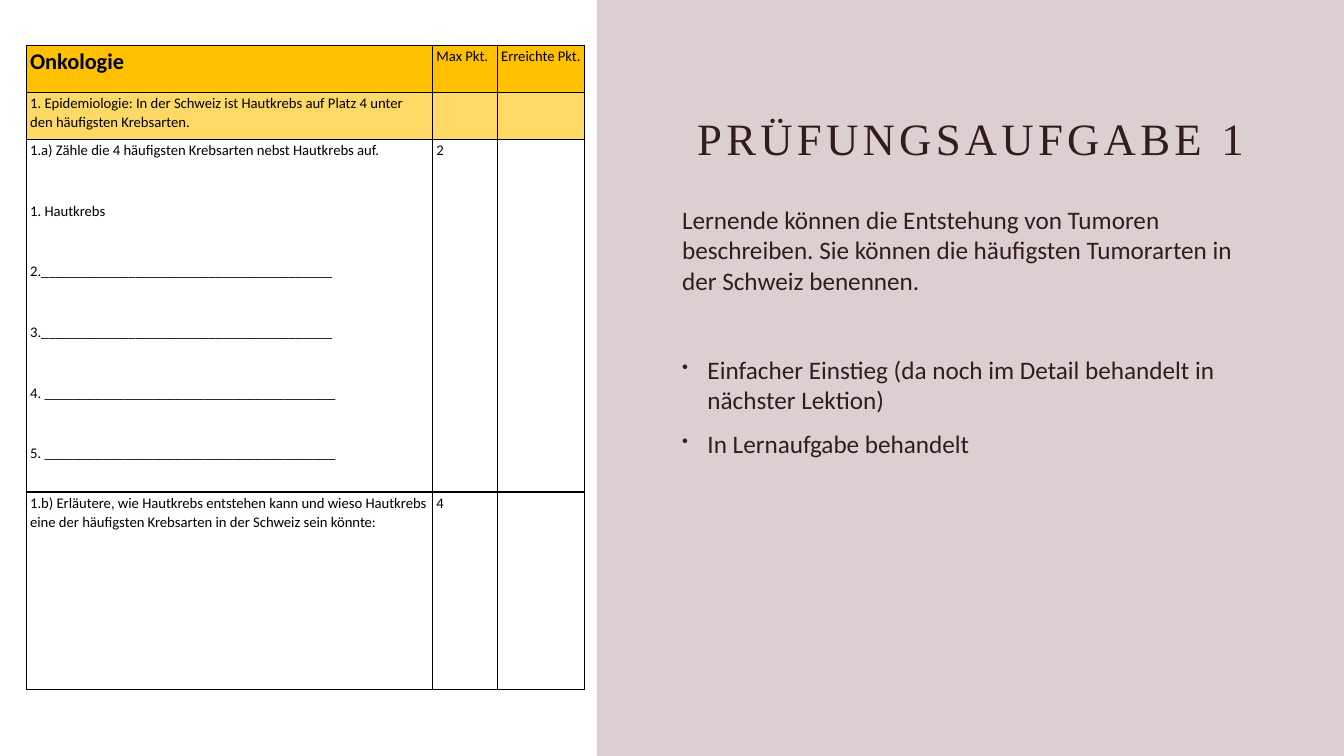
import pptx
import pptx.dml.color
import pptx.enum.shapes
import pptx.enum.text
import pptx.oxml
import pptx.oxml.ns
import pptx.util
from pptx.dml.color import RGBColor
from pptx.util import Cm, Pt

WHITE = RGBColor(0xFF, 0xFF, 0xFF)
BLACK = RGBColor(0x00, 0x00, 0x00)
MAUVE = RGBColor(0x76, 0x43, 0x4D)
DARK_BROWN = RGBColor(0x31, 0x1C, 0x20)
AMBER = RGBColor(0xFF, 0xC0, 0x00)
LIGHT_AMBER = RGBColor(0xFF, 0xD9, 0x66)

BODY_FONT = "Calibri"
TITLE_FONT = "Times New Roman"
ANSWER_LINE = "_" * 40

COLUMN_WIDTHS = [10.24, 1.63, 2.21]
ROW_HEIGHTS = [1.19, 1.19, 8.88, 4.97]
ROW_FILLS = [AMBER, LIGHT_AMBER, None, None]
EXAM_ROWS = [
    [["Onkologie"], ["Max Pkt."], ["Erreichte Pkt."]],
    [["1. Epidemiologie: In der Schweiz ist Hautkrebs auf Platz 4 unter den häufigsten Krebsarten."], [], []],
    [
        [
            "1.a) Zähle die 4 häufigsten Krebsarten nebst Hautkrebs auf.",
            "1. Hautkrebs",
            "2." + ANSWER_LINE,
            "3." + ANSWER_LINE,
            "4. " + ANSWER_LINE,
            "5. " + ANSWER_LINE,
        ],
        ["2"],
        [],
    ],
    [
        ["1.b) Erläutere, wie Hautkrebs entstehen kann und wieso Hautkrebs "
         "eine der häufigsten Krebsarten in der Schweiz sein könnte:"],
        ["4"],
        [],
    ],
]

GOAL = ("Lernende können die Entstehung von Tumoren beschreiben. "
        "Sie können die häufigsten Tumorarten in der Schweiz benennen.")
REMARKS = [
    "Einfacher Einstieg (da noch im Detail behandelt in nächster Lektion)",
    "In Lernaufgabe behandelt",
]


def format_runs(paragraph, font_name, size, color, bold=False):
    for run in paragraph.runs:
        run.font.name = font_name
        run.font.size = Pt(size)
        run.font.color.rgb = color
        run.font.bold = bold


def write_paragraphs(text_frame, texts):
    text_frame.text = "\n".join(texts)
    return text_frame.paragraphs


def add_text_frame(slide, left, top, width, height):
    text_frame = slide.shapes.add_textbox(Cm(left), Cm(top), Cm(width), Cm(height)).text_frame
    text_frame.word_wrap = True
    return text_frame


def add_panel(slide):
    """Add the translucent area behind the right half."""
    panel = slide.shapes.add_shape(
        pptx.enum.shapes.MSO_SHAPE.RECTANGLE, Cm(15.04), Cm(0), Cm(18.83), Cm(19.05))
    panel.shadow.inherit = False
    panel.line.fill.background()
    panel.fill.solid()
    panel.fill.fore_color.rgb = MAUVE
    color = panel.fill._xPr.find(".//" + pptx.oxml.ns.qn("a:srgbClr"))
    color.append(pptx.oxml.parse_xml(f'<a:alpha {pptx.oxml.ns.nsdecls("a")} val="25000"/>'))


def add_title(slide):
    text_frame = add_text_frame(slide, 16.97, 0.94, 14.99, 3.35)
    text_frame.vertical_anchor = pptx.enum.text.MSO_ANCHOR.BOTTOM
    paragraph = write_paragraphs(text_frame, ["PRÜFUNGSAUFGABE 1"])[0]
    paragraph.alignment = pptx.enum.text.PP_ALIGN.CENTER
    paragraph.line_spacing = 0.9
    format_runs(paragraph, TITLE_FONT, 32, DARK_BROWN)
    paragraph.runs[0].font._element.set("spc", "300")


def add_bullet(paragraph):
    properties = paragraph._p.get_or_add_pPr()
    properties.set("marL", str(Cm(0.64)))
    properties.set("indent", str(-Cm(0.64)))
    namespace = pptx.oxml.ns.nsdecls("a")
    properties.append(pptx.oxml.parse_xml(f'<a:buSzPct {namespace} val="70000"/>'))
    properties.append(pptx.oxml.parse_xml(f'<a:buChar {namespace} char="•"/>'))


def add_description(slide):
    text_frame = add_text_frame(slide, 16.94, 5.03, 15.06, 12.5)
    goal, *remarks = write_paragraphs(text_frame, [GOAL, *REMARKS])
    for paragraph in [goal, *remarks]:
        paragraph.space_before = Pt(10)
        format_runs(paragraph, BODY_FONT, 18, DARK_BROWN)
    remarks[0].space_before = Pt(42)
    for paragraph in remarks:
        add_bullet(paragraph)


def add_cell_borders(cell):
    properties = cell._tc.get_or_add_tcPr()
    for position, side in enumerate(["lnL", "lnR", "lnT", "lnB"]):
        properties.insert(position, pptx.oxml.parse_xml(
            f'<a:{side} {pptx.oxml.ns.nsdecls("a")} w="{Pt(1)}">'
            f'<a:solidFill><a:srgbClr val="{BLACK}"/></a:solidFill></a:{side}>'))


def fill_cell(cell, texts, color, is_heading):
    cell.margin_left = cell.margin_right = Cm(0.1)
    cell.margin_top = Cm(0.02)
    cell.margin_bottom = Cm(0)
    if color is None:
        cell.fill.background()
    else:
        cell.fill.solid()
        cell.fill.fore_color.rgb = color
    add_cell_borders(cell)
    if not texts:
        return
    for paragraph in write_paragraphs(cell.text_frame, texts):
        paragraph.line_spacing = 1.07
        paragraph.space_after = Pt(29.7 if len(texts) > 1 else 8)
        format_runs(paragraph, BODY_FONT, 16 if is_heading else 10.5, BLACK, is_heading)


def add_exam_table(slide):
    table = slide.shapes.add_table(
        len(ROW_HEIGHTS), len(COLUMN_WIDTHS), Cm(0.66), Cm(1.14),
        Cm(sum(COLUMN_WIDTHS)), Cm(sum(ROW_HEIGHTS))).table
    table.first_row = False
    table.horz_banding = False
    for column, width in zip(table.columns, COLUMN_WIDTHS):
        column.width = Cm(width)
    for row, height in zip(table.rows, ROW_HEIGHTS):
        row.height = Cm(height)
    for row_index, (texts_in_row, color) in enumerate(zip(EXAM_ROWS, ROW_FILLS)):
        for column_index, texts in enumerate(texts_in_row):
            is_heading = row_index == column_index == 0
            fill_cell(table.cell(row_index, column_index), texts, color, is_heading)


def main():
    presentation = pptx.Presentation()
    presentation.slide_width = Cm(33.87)
    presentation.slide_height = Cm(19.05)
    slide = presentation.slides.add_slide(presentation.slide_layouts[6])
    slide.background.fill.solid()
    slide.background.fill.fore_color.rgb = WHITE
    add_panel(slide)
    add_title(slide)
    add_description(slide)
    add_exam_table(slide)
    presentation.save("out.pptx")


if __name__ == "__main__":
    main()
